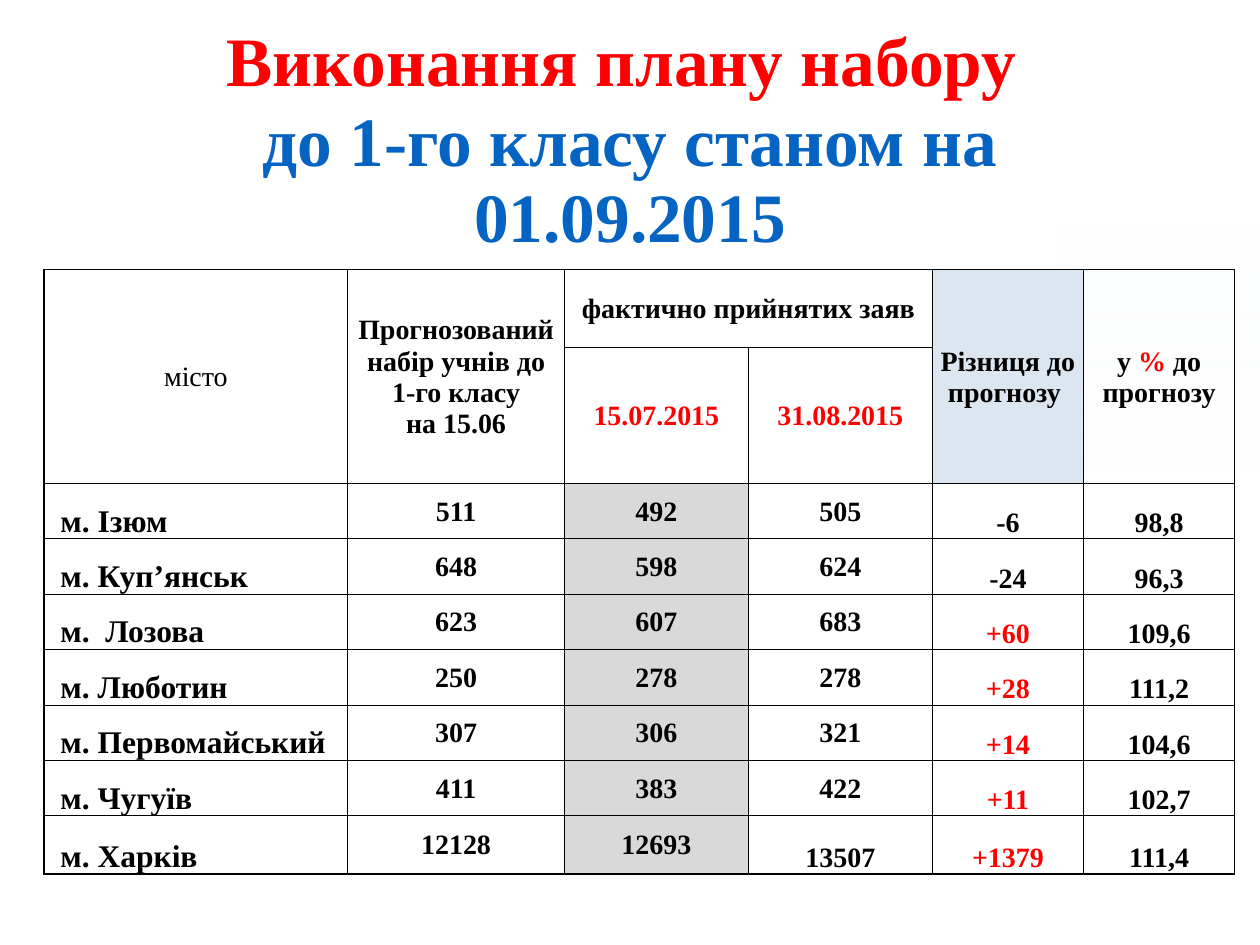
from lxml import etree
from pptx import Presentation
from pptx.dml.color import RGBColor
from pptx.enum import shapes, text
from pptx.oxml import ns
from pptx.util import Inches, Pt

RED = RGBColor(0xFF, 0x00, 0x00)
BLUE = RGBColor(0x05, 0x63, 0xC1)
BLACK = RGBColor(0x00, 0x00, 0x00)
WHITE = RGBColor(0xFF, 0xFF, 0xFF)
PALE_BLUE = RGBColor(0xDC, 0xE6, 0xF1)
GREY = RGBColor(0xD9, 0xD9, 0xD9)
TINT = RGBColor(0xF7, 0xFA, 0xFD)
FONT = "Times New Roman"
MIDDLE, BOTTOM = text.MSO_ANCHOR.MIDDLE, text.MSO_ANCHOR.BOTTOM
CENTER, LEFT = text.PP_ALIGN.CENTER, text.PP_ALIGN.LEFT

COLUMN_WIDTHS = [2.41, 1.72, 1.46, 1.46, 1.2, 1.2]
ROW_HEIGHTS = [0.62, 0.59] + [0.44] * 6 + [0.46]

# row, column, last row, last column, paragraphs, fill, format
HEADERS = [
    (0, 0, 1, 0, ["місто"], None, {"bold": False}),
    (0, 1, 1, 1, ["Прогнозований набір учнів до", "1-го класу", "на 15.06"], None, {}),
    (0, 2, 0, 3, ["фактично прийнятих заяв"], WHITE, {}),
    (0, 4, 1, 4, ["Різниця до прогнозу "], PALE_BLUE, {}),
    (0, 5, 1, 5, [["у ", ("%", RED), " до прогнозу"]], None, {}),
    (1, 2, 1, 2, ["15.07.2015"], WHITE, {"color": RED}),
    (1, 3, 1, 3, ["31.08.2015"], WHITE, {"color": RED}),
]
CITIES = [
    ("м. Ізюм", "511", "492", "505", "-6", "98,8"),
    ("м. Куп’янськ", "648", "598", "624", "-24", "96,3"),
    ("м.  Лозова", "623", "607", "683", "+60", "109,6"),
    ("м. Люботин", "250", "278", "278", "+28", "111,2"),
    ("м. Первомайський", "307", "306", "321", "+14", "104,6"),
    ("м. Чугуїв", "411", "383", "422", "+11", "102,7"),
    ("м. Харків", "12128", "12693", "13507", "+1379", "111,4"),
]


def write(frame, paragraphs, size=16, color=BLACK, bold=True, align=CENTER, spacing=None):
    """Each paragraph is a string or a list of strings and (string, colour[, size])."""
    frame.word_wrap = True
    for index, parts in enumerate(paragraphs):
        paragraph = frame.paragraphs[0] if index == 0 else frame.add_paragraph()
        paragraph.alignment = align
        if spacing:
            paragraph.line_spacing = spacing
        for part in [parts] if isinstance(parts, str) else parts:
            if part == "\n":
                paragraph.add_line_break()
                continue
            words, *own = (part,) if isinstance(part, str) else part
            run = paragraph.add_run()
            run.text = words
            run.font.name = FONT
            run.font.bold = bold
            run.font.color.rgb = own[0] if own else color
            run.font.size = Pt(own[1] if len(own) > 1 else size)


def set_borders(cell, left, right, top, bottom):
    properties = cell._tc.get_or_add_tcPr()
    for side, width in zip("LRTB", (left, right, top, bottom)):
        line = etree.SubElement(properties, ns.qn(f"a:ln{side}"), w=str(Pt(width)))
        solid = etree.SubElement(line, ns.qn("a:solidFill"))
        etree.SubElement(solid, ns.qn("a:srgbClr"), val=str(BLACK))


def fill_cell(cell, paragraphs, fill=None, anchor=MIDDLE, indent=0.01, **style):
    cell.margin_left = Inches(indent)
    cell.margin_right = cell.margin_top = Inches(0.01)
    cell.margin_bottom = 0
    cell.vertical_anchor = anchor
    if fill is None:
        cell.fill.background()
    else:
        cell.fill.solid()
        cell.fill.fore_color.rgb = fill
    write(cell.text_frame, paragraphs, **style)


def add_corner_tint(slide):
    tint = slide.shapes.add_shape(shapes.MSO_SHAPE.RECTANGLE, Inches(8.38), Inches(1.8),
                                  Inches(1.62), Inches(1.92))
    tint.shadow.inherit = False
    tint.line.fill.background()
    tint.fill.gradient()
    tint.fill.gradient_angle = 270
    start, end = tint.fill.gradient_stops
    start.color.rgb, start.position = TINT, 0
    end.color.rgb, end.position = WHITE, 0.74
    first_color = tint._element.spPr.find(".//" + ns.qn("a:srgbClr"))
    etree.SubElement(first_color, ns.qn("a:alpha"), val="0")


def add_title(slide):
    title = slide.shapes.add_textbox(Inches(0.69), Inches(0.4), Inches(8.62), Inches(1.45))
    title.text_frame.vertical_anchor = MIDDLE
    write(title.text_frame,
          [[("Виконання плану набору ", RED), "\n", "до 1-го класу станом на",
            (" ", BLUE, 43.2), "01.09.2015"]],
          size=39.6, color=BLUE, spacing=0.9)


def add_header(table):
    for row in range(2):
        for column in range(len(COLUMN_WIDTHS)):
            set_borders(table.cell(row, column), 1, 1, 1, 1)
    for row, column, last_row, last_column, paragraphs, fill, style in HEADERS:
        cell = table.cell(row, column)
        if (row, column) != (last_row, last_column):
            cell.merge(table.cell(last_row, last_column))
        fill_cell(cell, paragraphs, fill, **style)


def add_city(table, row, values):
    first, last = row == 2, row == len(ROW_HEIGHTS) - 1
    for column, value in enumerate(values):
        cell = table.cell(row, column)
        set_borders(cell, 1 if column == 0 else 0.5, 1 if column == 5 else 0.5,
                    1 if first else 0.5, 1 if last else 0.5)
        if column == 0:
            fill_cell(cell, [value], anchor=BOTTOM, indent=0.13, size=18, align=LEFT)
            continue
        low = column >= 4 or (last and column == 3)
        fill_cell(cell, [value], GREY if column == 2 else None,
                  anchor=BOTTOM if low else MIDDLE,
                  color=RED if value.startswith("+") else BLACK)


def add_enrolment_table(slide):
    table = slide.shapes.add_table(len(ROW_HEIGHTS), len(COLUMN_WIDTHS), Inches(0.35),
                                   Inches(2.14), Inches(sum(COLUMN_WIDTHS)),
                                   Inches(sum(ROW_HEIGHTS))).table
    table.first_row = table.horz_banding = False
    for column, width in zip(table.columns, COLUMN_WIDTHS):
        column.width = Inches(width)
    for row, height in zip(table.rows, ROW_HEIGHTS):
        row.height = Inches(height)
    add_header(table)
    for row, values in enumerate(CITIES, start=2):
        add_city(table, row, values)


def main():
    deck = Presentation()
    deck.slide_width, deck.slide_height = Inches(10), Inches(7.5)
    slide = deck.slides.add_slide(deck.slide_layouts[6])
    add_corner_tint(slide)
    add_title(slide)
    add_enrolment_table(slide)
    deck.save("out.pptx")


if __name__ == "__main__":
    main()
